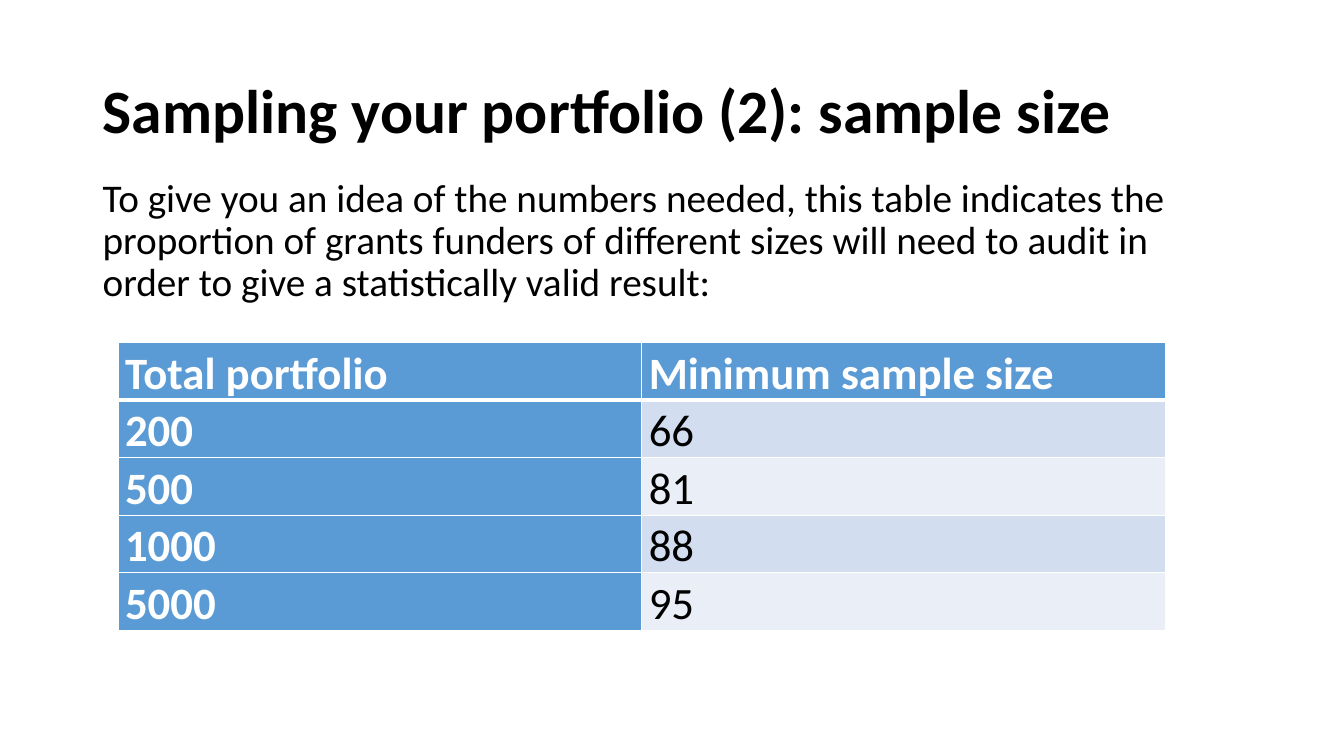
from lxml import etree
from pptx import Presentation
from pptx.dml.color import RGBColor as RGB
from pptx.enum.text import MSO_ANCHOR as Anchor
from pptx.oxml.ns import qn
from pptx.util import Inches, Pt

COLORS = {"text": "000000", "white": "FFFFFF", "accent": "5B9BD5",
          "band_dark": "D2DEEF", "band_light": "EAEFF7"}
SAMPLE_SIZES = [("Total portfolio", "Minimum sample size"),
                ("200", "66"), ("500", "81"), ("1000", "88"), ("5000", "95")]


def write(tf, text, size=28, color="text", bold=False, spacing=0.9, before=0):
    tf.word_wrap = True
    p = tf.paragraphs[0]
    p.line_spacing = spacing
    p.space_before = Pt(before)
    r = p.add_run()
    r.text = text
    r.font.name = "Calibri"
    r.font.size = Pt(size)
    r.font.bold = bold
    r.font.color.rgb = RGB.from_string(COLORS[color])


class SlideBuilder:
    """Holds the current slide and draws its elements in one style."""

    def __init__(self, prs):
        self.s = prs.slides.add_slide(prs.slide_layouts[6])

    def text(self, box, text, anchor=Anchor.TOP, **fmt):
        sp = self.s.shapes.add_textbox(*map(Inches, box))
        sp.text_frame.vertical_anchor = anchor
        write(sp.text_frame, text, **fmt)

    def borders(self, cell, **widths):
        tc_pr = cell._tc.get_or_add_tcPr()
        for side in "LRTB":
            ln = etree.SubElement(tc_pr, qn(f"a:ln{side}"), w=str(Pt(widths.get(side, 1))))
            fill = etree.SubElement(ln, qn("a:solidFill"))
            etree.SubElement(fill, qn("a:srgbClr"), val=COLORS["white"])

    def table(self, box, rows, row_height):
        frame = self.s.shapes.add_table(len(rows), len(rows[0]), *map(Inches, box))
        table = frame.table
        for i, values in enumerate(rows):
            table.rows[i].height = Inches(row_height)
            for j, value in enumerate(values):
                cell = table.cell(i, j)
                cell.margin_left = cell.margin_right = Inches(0.07)
                cell.margin_top = cell.margin_bottom = 0
                heading = i == 0 or j == 0
                band = "band_dark" if i % 2 else "band_light"
                self.borders(cell, **{0: {"B": 3}, 1: {"T": 3}}.get(i, {}))
                cell.fill.solid()
                cell.fill.fore_color.rgb = RGB.from_string(COLORS["accent" if heading else band])
                write(cell.text_frame, value, size=32, bold=heading, spacing=1.07,
                      color="white" if heading else "text")
        frame.height = Inches(box[3])


def main():
    prs = Presentation()
    prs.slide_width, prs.slide_height = Inches(13.33), Inches(7.5)
    slide = SlideBuilder(prs)
    slide.text((0.92, 0.4, 11.5, 1.45), "Sampling your portfolio (2): sample size",
               anchor=Anchor.MIDDLE, size=44, bold=True)
    slide.text((0.92, 1.72, 11.5, 5.03),
               "To give you an idea of the numbers needed, this table indicates the "
               "proportion of grants funders of different sizes will need to audit in "
               "order to give a statistically valid result:", before=10)
    slide.table((1.17, 3.4, 10.39, 2.73), SAMPLE_SIZES, row_height=0.45)
    prs.save("out.pptx")


if __name__ == "__main__":
    main()
